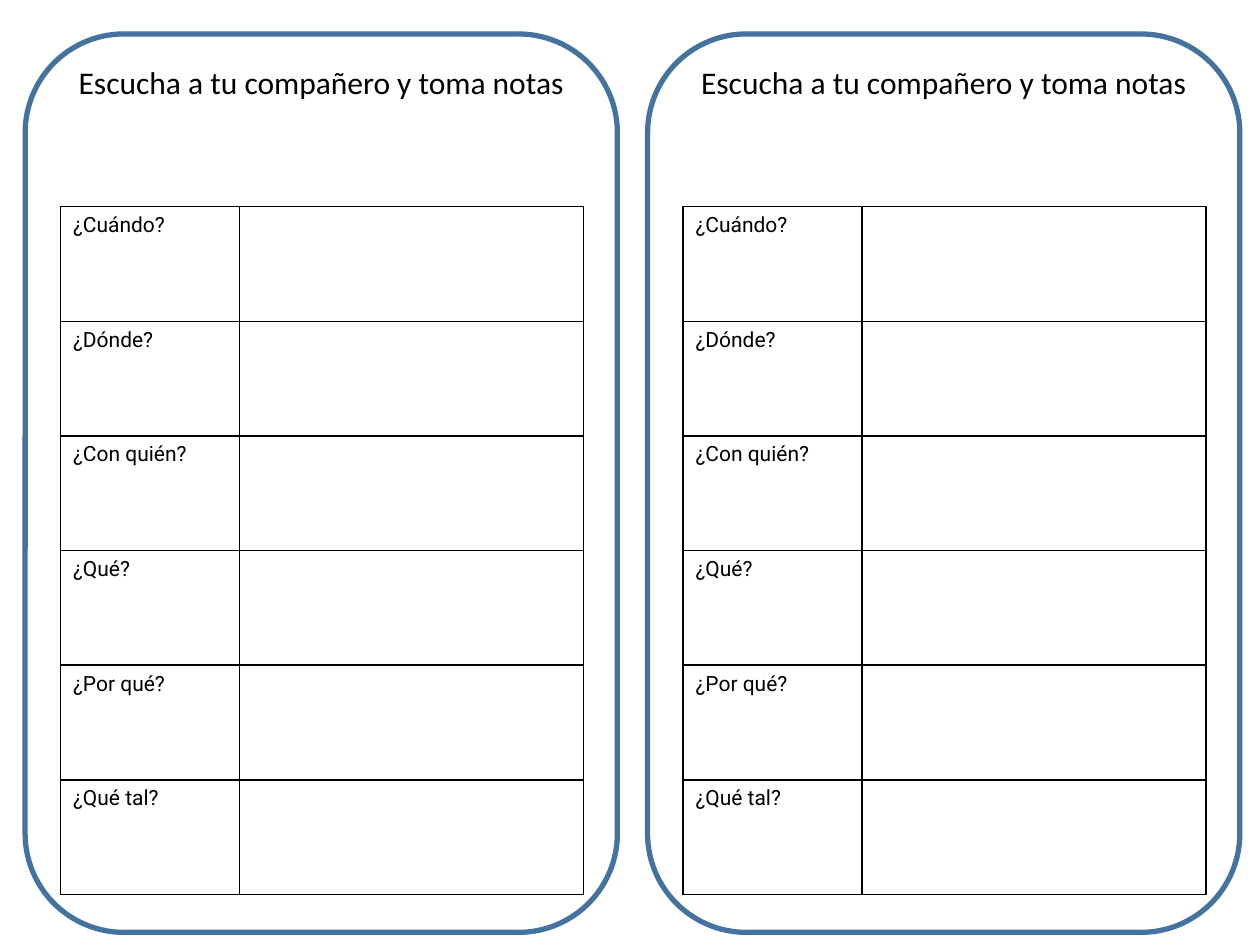
from lxml import etree
from pptx import Presentation
from pptx import util as u
from pptx.dml.color import RGBColor
from pptx.enum import shapes, text
from pptx.oxml import ns

TITLE = "Escucha a tu compañero y toma notas"
QUESTIONS = ["¿Cuándo?", "¿Dónde?", "¿Con quién?", "¿Qué?", "¿Por qué?", "¿Qué tal?"]
BLACK, WHITE, BLUE = "000000", "FFFFFF", "43739E"

SLIDE_W, SLIDE_H = u.Inches(10), u.Inches(7.5)
MARGIN_X, MARGIN_Y = u.Inches(0.2), u.Inches(0.27)
CARD_W, CARD_H = u.Inches(4.7), u.Inches(7.13)
CARD_GAP = u.Inches(0.24)
CARD_COUNT = 2


def color(hex_value):
    return RGBColor.from_string(hex_value)


def set_font(paragraph, name, size):
    paragraph.font.name = name
    paragraph.font.size = u.Pt(size)
    paragraph.font.color.rgb = color(BLACK)


def add_borders(cell, hex_value, points):
    properties = cell._tc.get_or_add_tcPr()
    for index, side in enumerate(("lnL", "lnR", "lnT", "lnB")):
        border = etree.Element(ns.qn(f"a:{side}"), w=str(u.Pt(points)))
        fill = etree.SubElement(border, ns.qn("a:solidFill"))
        etree.SubElement(fill, ns.qn("a:srgbClr"), val=hex_value)
        properties.insert(index, border)  # borders come before the fill


def add_frame(slide, left, top, width, height):
    """Rounded card with its title at the top."""
    frame = slide.shapes.add_shape(
        shapes.MSO_SHAPE.ROUNDED_RECTANGLE, left, top, width, height)
    frame.shadow.inherit = False
    frame.fill.solid()
    frame.fill.fore_color.rgb = color(WHITE)
    frame.line.color.rgb = color(BLUE)
    frame.line.width = u.Pt(3)

    body = frame.text_frame
    body.word_wrap = True
    body.vertical_anchor = text.MSO_ANCHOR.TOP
    body.margin_top = 0
    title = body.paragraphs[0]
    title.text = TITLE
    title.alignment = text.PP_ALIGN.CENTER
    set_font(title, "Calibri", 18)


def add_questions(slide, left, top, width, height):
    """One row per question, with an empty cell for the answer."""
    grid = slide.shapes.add_table(
        len(QUESTIONS), 2, left, top, width, height).table
    grid.first_row = grid.horz_banding = False
    question_w = u.Inches(1.42)
    grid.columns[0].width = question_w
    grid.columns[1].width = width - question_w

    for row, question in enumerate(QUESTIONS):
        grid.cell(row, 0).text = question
        for cell in grid.rows[row].cells:
            set_font(cell.text_frame.paragraphs[0], "Roboto", 12)
            cell.fill.background()
            add_borders(cell, BLACK, 1)


def add_card(slide, left, top, width, height):
    add_frame(slide, left, top, width, height)
    inset = u.Inches(0.28)
    add_questions(slide, left + inset, top + u.Inches(1.37),
                  width - 2 * inset + u.Inches(0.01), u.Inches(5.46))


def main():
    prs = Presentation()
    prs.slide_width, prs.slide_height = SLIDE_W, SLIDE_H
    slide = prs.slides.add_slide(prs.slide_layouts[6])
    for index in range(CARD_COUNT):
        add_card(slide, MARGIN_X + index * (CARD_W + CARD_GAP), MARGIN_Y,
                 CARD_W, CARD_H)
    prs.save("out.pptx")


if __name__ == "__main__":
    main()
